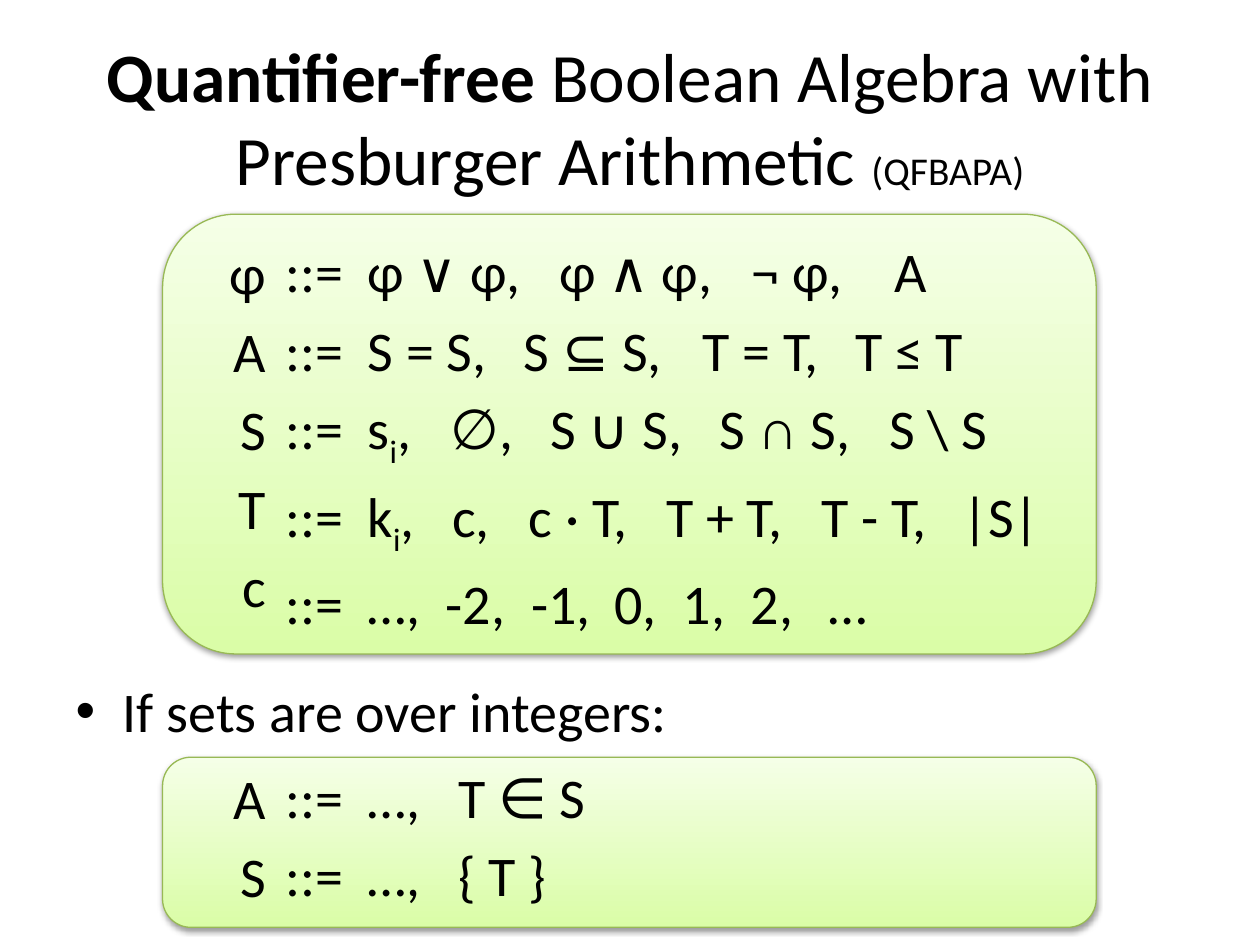
from itertools import groupby

from lxml import etree
from pptx import Presentation
from pptx.dml.color import RGBColor
from pptx.enum import shapes, text
from pptx.oxml import parse_xml
from pptx.oxml.ns import qn
from pptx.util import Inches, Pt

SUBSCRIPT = "ᵢ"  # marks a lowered i in the grammar below
SHADOW = (
    '<a:effectLst xmlns:a="http://schemas.openxmlformats.org/drawingml/2006/main">'
    '<a:outerShdw blurRad="39370" dist="20320" dir="5400000" rotWithShape="0">'
    '<a:srgbClr val="000000"><a:alpha val="38000"/></a:srgbClr>'
    "</a:outerShdw></a:effectLst>"
)

# Each row: symbol, alternatives, tab stops of the alternatives in inches
FORMULA_ROWS = [
    ("φ", ["φ ∨ φ,", "φ ∧ φ,", "¬ φ,", "A"], [0.65, 2.17, 3.7, 4.83]),
    ("A", ["S = S,", "S ⊆ S,", "T = T,", "T ≤ T"], [0.65, 1.89, 3.31, 4.52]),
    ("S", ["sᵢ,", "∅,", "S ∪ S,", "S ∩ S,", "S \\ S"], [0.65, 1.31, 2.1, 3.44, 4.79]),
    ("T", ["kᵢ,", "c,", "c · T,", "T + T,", "T - T,", "|S|"],
     [0.65, 1.32, 1.93, 3.02, 4.25, 5.37]),
    ("c", ["…,", "-2,", "-1,", "0,", "1,", "2,", "…"],
     [0.65, 1.27, 1.95, 2.61, 3.15, 3.69, 4.31]),
]
INTEGER_ROWS = [
    ("A", ["…,", "T ∈ S"], [0.65, 1.37]),
    ("S", ["…,", "{ T }"], [0.65, 1.37]),
]


def add_spans(para, words, size=32, bold=False):
    """Add words, lowering marked subscripts and setting ∩ in Arial."""
    for special, letters in groupby(words, lambda c: c if c in SUBSCRIPT + "∩" else ""):
        span = para.add_run()
        span.text = "".join(letters).replace(SUBSCRIPT, "i")
        formats = {"name": "Arial" if special == "∩" else "Calibri",
                   "size": Pt(size), "bold": bold}
        for name, value in formats.items():
            setattr(span.font, name, value)
        span.font.color.rgb = RGBColor.from_string("000000")
        if special == SUBSCRIPT:
            span.font._element.set("baseline", "-25000")


def add_column(page, place, lines, align, stops):
    """Add a text box with one paragraph a line, each with its own tab stops."""
    box = page.shapes.add_textbox(*[Inches(length) for length in place])
    frame = box.text_frame
    frame.word_wrap = True
    for index, line in enumerate(lines):
        para = frame.paragraphs[0] if index == 0 else frame.add_paragraph()
        para.alignment = align
        para.space_before = Pt(6.4)
        if stops:
            tabs = etree.SubElement(para._p.get_or_add_pPr(), qn("a:tabLst"))
            for stop in stops[index]:
                etree.SubElement(tabs, qn("a:tab"), pos=str(Inches(stop)), algn="l")
        add_spans(para, line)


deck = Presentation()
deck.slide_width, deck.slide_height = Inches(10), Inches(7.5)
page = deck.slides.add_slide(deck.slide_layouts[1])

title, body = page.placeholders
for holder, top, height in [(title, 0.3, 1.25), (body, 5.32, 0.68)]:
    holder.left, holder.top = Inches(0.5), Inches(top)
    holder.width, holder.height = Inches(9), Inches(height)
    holder.text_frame.auto_size = text.MSO_AUTO_SIZE.NONE

heading = title.text_frame.paragraphs[0]
heading.alignment = text.PP_ALIGN.CENTER
title.text_frame.vertical_anchor = text.MSO_ANCHOR.MIDDLE
add_spans(heading, "Quantifier-free", 39.6, bold=True)
add_spans(heading, " Boolean Algebra with Presburger Arithmetic ", 39.6)
add_spans(heading, "(QFBAPA)", 22.5)
add_spans(body.text_frame.paragraphs[0], "If sets are over integers:")

# Panel top and height, text top and height, grammar rows
panels = [
    (1.7, 3.49, 1.84, 3.23, FORMULA_ROWS),
    (6.01, 1.35, 6.01, 1.24, INTEGER_ROWS),
]
for top, height, text_top, text_height, rows in panels:
    panel = page.shapes.add_shape(
        shapes.MSO_SHAPE.ROUNDED_RECTANGLE,
        Inches(1.29), Inches(top), Inches(7.41), Inches(height))
    panel.fill.gradient()
    panel.fill.gradient_angle = 90
    for stop, (position, colour) in zip(
            panel.fill.gradient_stops, [(0, "DAFDA7"), (1, "F5FFE7")]):
        stop.position = position
        stop.color.rgb = RGBColor.from_string(colour)
    panel.line.color.rgb = RGBColor.from_string("98B955")
    panel.line.width = Pt(0.75)
    panel._element.spPr.append(parse_xml(SHADOW))

    symbols = [symbol for symbol, _, _ in rows]
    rules = ["\t".join(["::=", *choices]) for _, choices, _ in rows]
    stops = [positions for _, _, positions in rows]
    add_column(page, (1.56, text_top, 0.65, text_height), symbols,
               text.PP_ALIGN.RIGHT, None)
    add_column(page, (2.17, text_top - 0.01, 6.27, text_height), rules,
               text.PP_ALIGN.LEFT, stops)

deck.save("out.pptx")
